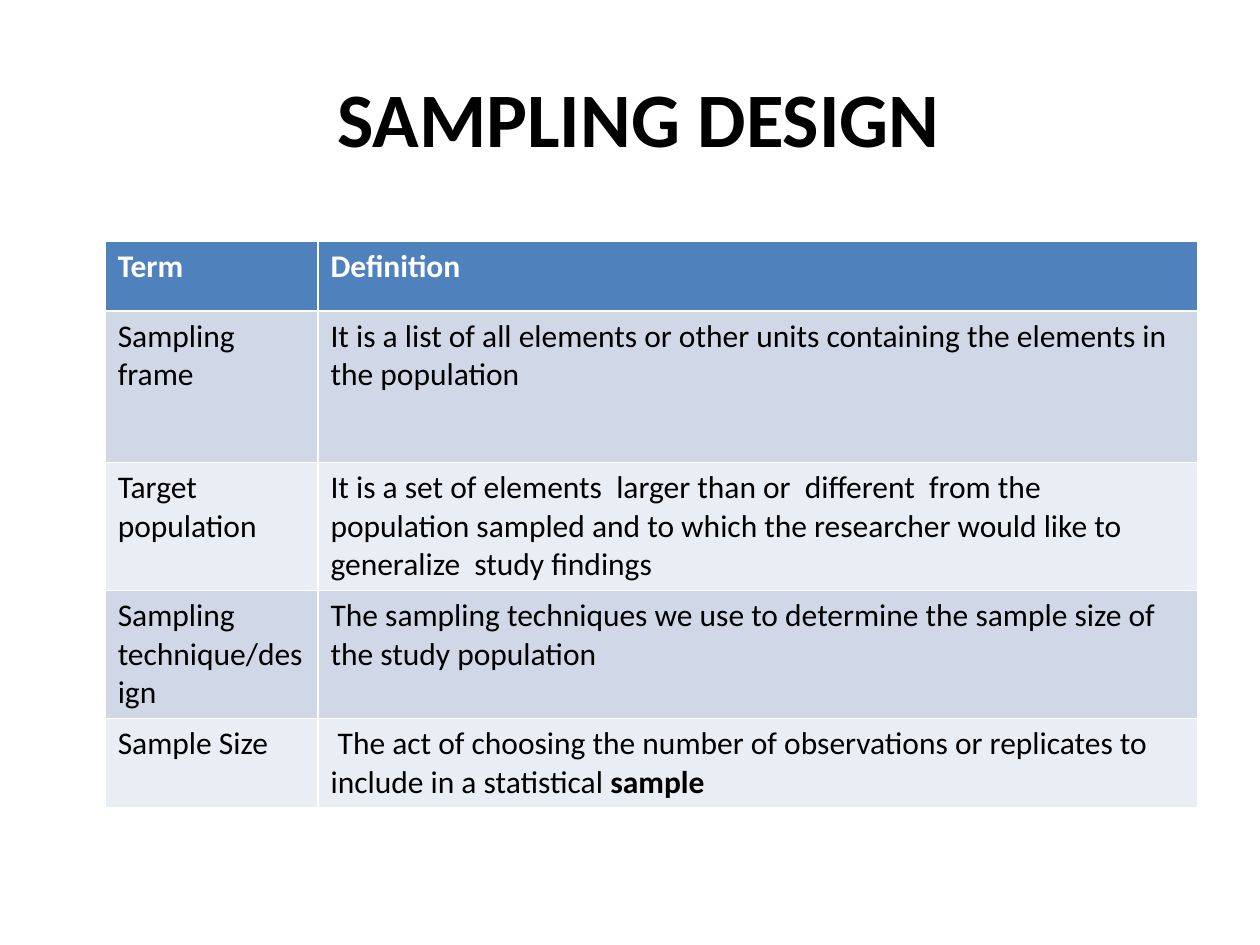
from dataclasses import dataclass

from pptx import Presentation
from pptx.dml.color import RGBColor
from pptx.enum.text import MSO_ANCHOR, PP_ALIGN
from pptx.util import Cm, Pt

FONT = "Calibri"
BLACK, WHITE = "000000", "FFFFFF"
HEADER_FILL = "4F81BD"
BAND_FILLS = ("D0D8E8", "E9EDF4")
COLUMN_WIDTHS = (4.29, 17.73)


@dataclass
class Row:
    term: str
    definition: str
    height: float = 1.4
    bold_ending: str = ""


ROWS = [
    Row("Term", "Definition"),
    Row("Sampling frame",
        "It is a list of all elements or other units containing the elements "
        "in the population", height=3.05),
    Row("Target population",
        "It is a set of elements  larger than or  different  from the "
        "population sampled and to which the researcher would like to "
        "generalize  study findings"),
    Row("Sampling technique/design",
        "The sampling techniques we use to determine the sample size of the "
        "study population"),
    Row("Sample Size",
        " The act of choosing the number of observations or replicates to "
        "include in a statistical ", bold_ending="sample"),
]


def rgb(color: str) -> RGBColor:
    return RGBColor.from_string(color)


def add_run(p, text: str, size: float, color: str, bold: bool = False) -> None:
    r = p.add_run()
    r.text = text
    r.font.name = FONT
    r.font.size = Pt(size)
    r.font.bold = bold
    r.font.color.rgb = rgb(color)


def add_title(s, text: str) -> None:
    sp = s.shapes.title
    sp.left, sp.top, sp.width, sp.height = Cm(1.27), Cm(0.76), Cm(22.86), Cm(3.18)
    tf = sp.text_frame
    tf.vertical_anchor = MSO_ANCHOR.MIDDLE
    p = tf.paragraphs[0]
    p.alignment = PP_ALIGN.CENTER
    add_run(p, text, 44, BLACK, bold=True)


def fill_row(table, index: int, row: Row) -> None:
    header = index == 0
    fill = HEADER_FILL if header else BAND_FILLS[(index - 1) % 2]
    color = WHITE if header else BLACK
    table.rows[index].height = Cm(row.height)
    for cell, text in zip(table.rows[index].cells, (row.term, row.definition)):
        cell.fill.solid()
        cell.fill.fore_color.rgb = rgb(fill)
        add_run(cell.text_frame.paragraphs[0], text, 18, color, bold=header)
    if row.bold_ending:
        p = table.cell(index, 1).text_frame.paragraphs[0]
        add_run(p, row.bold_ending, 18, color, bold=True)


def add_terms_table(s, rows: list[Row]) -> None:
    # The default table style supplies the white cell borders
    table = s.shapes.add_table(
        len(rows), len(COLUMN_WIDTHS), Cm(2.12), Cm(4.87),
        Cm(sum(COLUMN_WIDTHS)), Cm(sum(row.height for row in rows))).table
    for column, width in zip(table.columns, COLUMN_WIDTHS):
        column.width = Cm(width)
    for index, row in enumerate(rows):
        fill_row(table, index, row)


def main() -> None:
    prs = Presentation()
    prs.slide_width, prs.slide_height = Cm(25.4), Cm(19.05)
    s = prs.slides.add_slide(prs.slide_layouts[5])

    # Title
    add_title(s, " SAMPLING DESIGN")

    # Terms and definitions
    add_terms_table(s, ROWS)

    prs.save("out.pptx")


if __name__ == "__main__":
    main()
